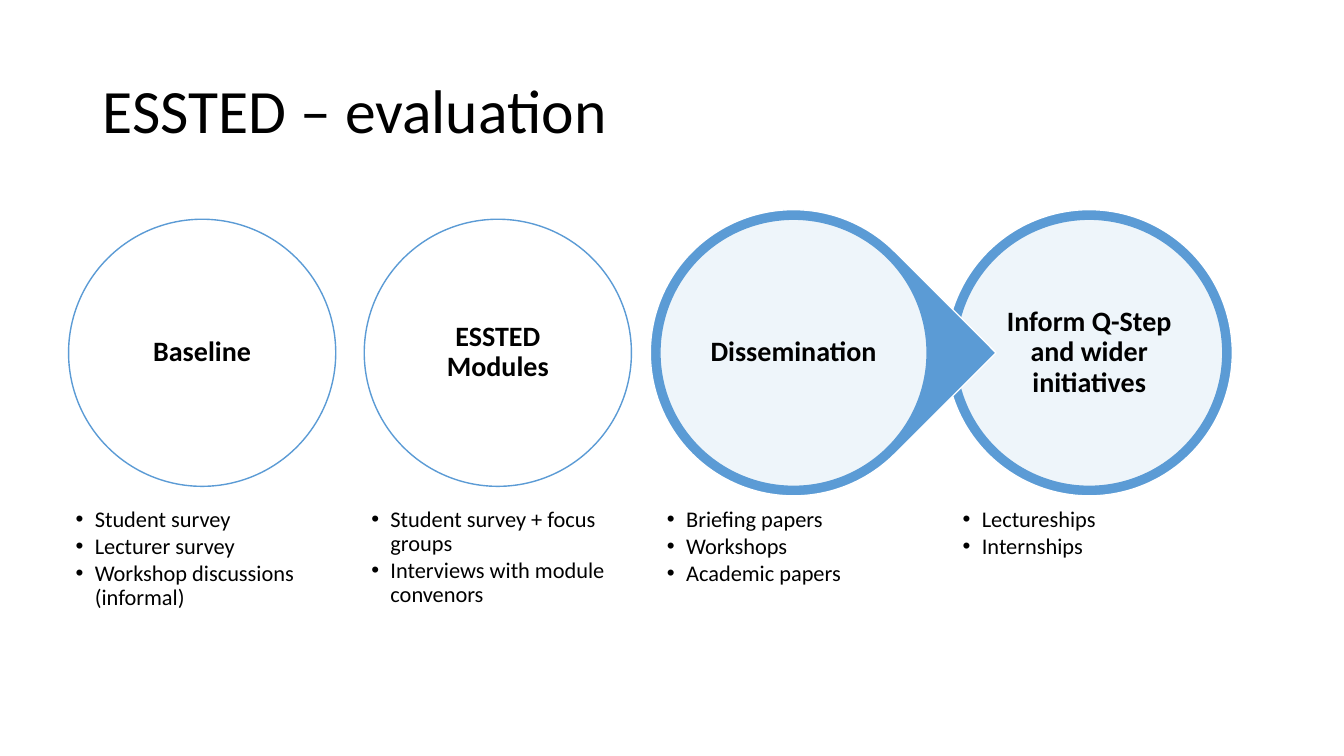
"""Build the ESSTED evaluation slide: four circles, each with a list below."""
from lxml import etree
from pptx import Presentation
from pptx.dml.color import RGBColor
from pptx.enum.shapes import MSO_SHAPE
from pptx.enum.text import MSO_ANCHOR, PP_ALIGN
from pptx.oxml.ns import qn
from pptx.util import Inches, Pt

OVAL, DROP = MSO_SHAPE.OVAL, MSO_SHAPE.TEAR
MIDDLE, TOP = MSO_ANCHOR.MIDDLE, MSO_ANCHOR.TOP
LEFT, CENTER = PP_ALIGN.LEFT, PP_ALIGN.CENTER
BLUE, WHITE, BLACK = "5B9BD5", "FFFFFF", "000000"

WIDE, HIGH = 13.33, 7.5
EDGE, STEP = 0.68, 0.22 * WIDE
SIZE, RING = 2.65, 2.84
MID = 3.5
LIST_TOP, LIST_HIGH = 4.97, 1.56
INDENT = 0.19

STAGES = [
    ("Baseline", None,
     ["Student survey", "Lecturer survey", "Workshop discussions (informal)"]),
    ("ESSTED Modules", None,
     ["Student survey + focus groups", "Interviews with module convenors"]),
    ("Dissemination", DROP,
     ["Briefing papers", "Workshops", "Academic papers"]),
    ("Inform Q-Step and wider initiatives", OVAL,
     ["Lectureships", "Internships"]),
]


def write(shape, lines, size, bold, align, anchor, gap, inset=None):
    """Fill a shape with formatted paragraphs."""
    frame = shape.text_frame
    frame.text = "\n".join(lines)
    frame.word_wrap = True
    frame.vertical_anchor = anchor
    if inset is not None:
        for side in ("left", "top", "right", "bottom"):
            setattr(frame, "margin_" + side, Inches(inset))
    looks = {"name": "Calibri", "size": Pt(size), "bold": bold}
    for para in frame.paragraphs:
        para.alignment = align
        para.line_spacing = 0.9
        para.space_after = Pt(gap)
        font = para.runs[0].font
        for key, value in looks.items():
            setattr(font, key, value)
        font.color.rgb = RGBColor.from_string(BLACK)


def disc(kind, mid, size, fill, line):
    """Add a round shape centred on the circle row."""
    shape = slide.shapes.add_shape(
        kind, Inches(mid - size / 2), Inches(MID - size / 2),
        Inches(size), Inches(size))
    shape.shadow.inherit = False
    shape.fill.solid()
    shape.fill.fore_color.rgb = RGBColor.from_string(fill)
    shape.line.color.rgb = RGBColor.from_string(line)
    shape.line.width = Pt(1)
    return shape


deck = Presentation()
deck.slide_width, deck.slide_height = Inches(WIDE), Inches(HIGH)
slide = deck.slides.add_slide(deck.slide_layouts[5])

title = slide.shapes.title
place = {"left": 0.92, "top": 0.4, "width": 11.5, "height": 1.45}
for key, value in place.items():
    setattr(title, key, Inches(value))
write(title, ["ESSTED – evaluation"], 44, False, LEFT, MIDDLE, 0)

for col, (name, back, items) in reversed(list(enumerate(STAGES))):
    left = EDGE + col * STEP
    mid = left + SIZE / 2
    if back is not None:
        ring = disc(back, mid, RING, BLUE, WHITE)
        if back == DROP:
            ring.rotation = 45
            ring.adjustments[0] = 1

    circle = disc(OVAL, mid, SIZE, WHITE, BLUE)
    tint = circle.fill._xPr.find(qn("a:solidFill"))[0]
    etree.SubElement(tint, qn("a:alpha"), val="90000")
    write(circle, [name], 20, True, CENTER, MIDDLE, 0, 0.02)

    notes = slide.shapes.add_textbox(
        Inches(left), Inches(LIST_TOP), Inches(SIZE), Inches(LIST_HIGH))
    write(notes, items, 16, False, LEFT, TOP, 2, 0.07)
    for para in notes.text_frame.paragraphs:
        props = para._p.get_or_add_pPr()
        props.set("marL", str(Inches(INDENT)))
        props.set("indent", str(-Inches(INDENT)))
        etree.SubElement(props, qn("a:buFont"), typeface="Arial")
        etree.SubElement(props, qn("a:buChar"), char="•")

deck.save("out.pptx")
